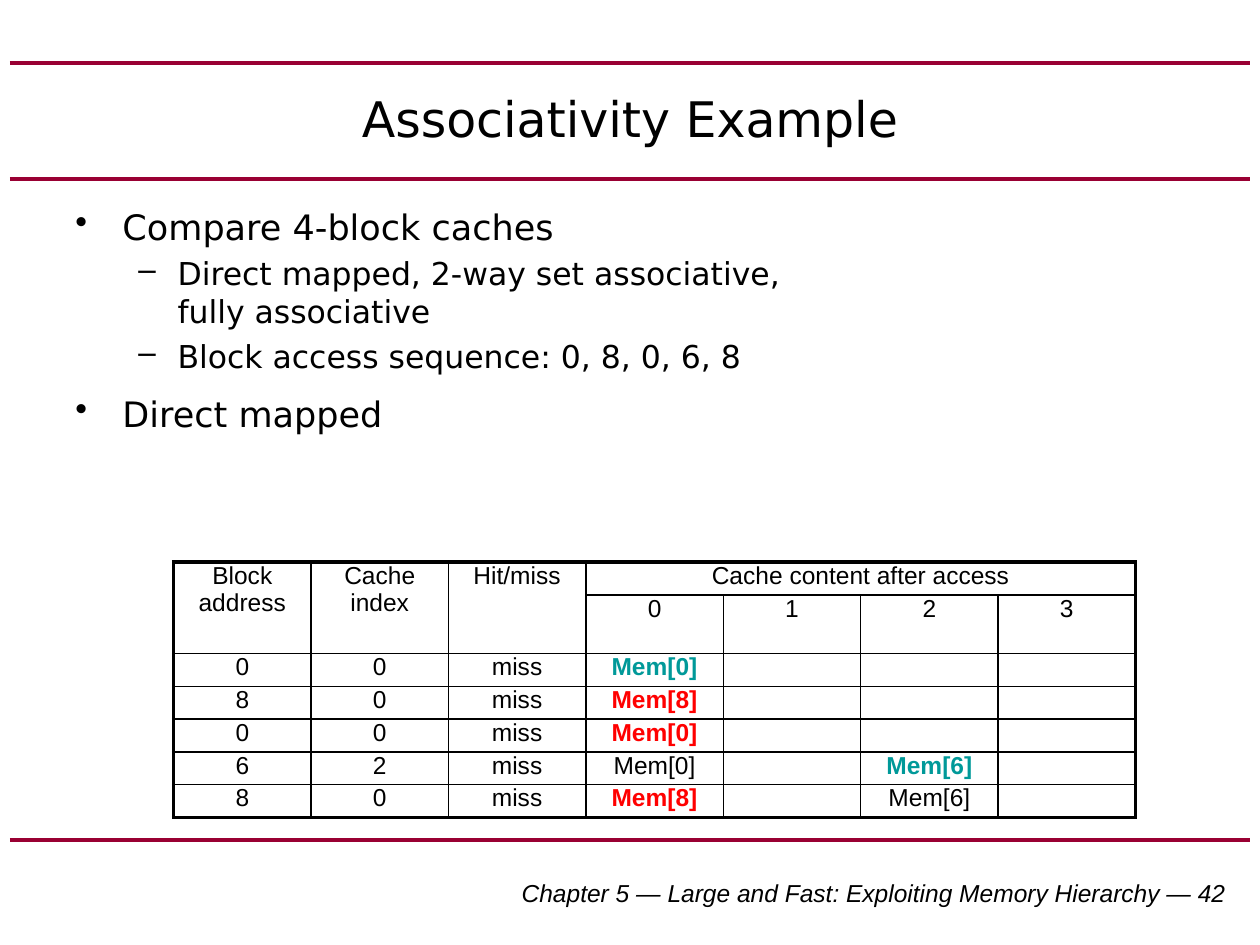
"""Build the slide comparing direct mapped cache accesses."""
from dataclasses import dataclass

from pptx import Presentation
from pptx.dml.color import RGBColor as Rgb
from pptx.enum.shapes import MSO_CONNECTOR as Conn
from pptx.enum.text import MSO_ANCHOR as Anchor, PP_ALIGN as Align
from pptx.oxml.ns import qn
from pptx.util import Cm, Pt
from lxml.etree import SubElement as Sub


@dataclass(frozen=True)
class Theme:
    ink: str = "000000"
    rule: str = "990033"
    new: str = "009999"
    swap: str = "FF0000"
    sans: str = "DejaVu Sans"
    plain: str = "Arial"
    title: int = 28
    body: int = 20
    sub: int = 18
    small: int = 14
    thin: float = 1
    thick: float = 2.25


look = Theme()

TITLE = "Associativity Example"
FOOTER = "Chapter 5 — Large and Fast: Exploiting Memory Hierarchy — 42"
POINTS = [
    (0, "Compare 4-block caches", 0),
    (1, "Direct mapped, 2-way set associative,\vfully associative", 4),
    (1, "Block access sequence: 0, 8, 0, 6, 8", 4),
    (0, "Direct mapped", 10),
]
LEVELS = [
    dict(bullet="•", left=0.95, hang=0.95, size=look.body),
    dict(bullet="–", left=2.06, hang=0.79, size=look.sub),
]
GRID = [
    ["Block address", "Cache index", "Hit/miss", "Cache content after access", "", "", ""],
    ["", "", "", "0", "1", "2", "3"],
    ["0", "0", "miss", "Mem[0]", "", "", ""],
    ["8", "0", "miss", "Mem[8]", "", "", ""],
    ["0", "0", "miss", "Mem[0]", "", "", ""],
    ["6", "2", "miss", "Mem[0]", "", "Mem[6]", ""],
    ["8", "0", "miss", "Mem[8]", "", "Mem[6]", ""],
]
MERGES = [((0, 0), (1, 0)), ((0, 1), (1, 1)), ((0, 2), (1, 2)), ((0, 3), (0, 6))]
MARKS = {(2, 3): look.new, (3, 3): look.swap, (4, 3): look.swap,
         (5, 5): look.new, (6, 3): look.swap}
RULES = [1.27, 3.61, 16.94]
ROWS = [0.66, 1.11] + [0.66] * 5
COL = 2.77


def write(para, text, size=look.small, font=look.plain, color=look.ink,
          bold=False, italic=False, align=Align.LEFT, before=0,
          bullet=None, left=0, hang=0):
    """Put text into a paragraph with its format."""
    para.text = text
    para.alignment = align
    if bullet:
        props = para._p.get_or_add_pPr()
        props.set("marL", str(Cm(left)))
        props.set("indent", str(-Cm(hang)))
        Sub(props, qn("a:buChar"), char=bullet)
    para.space_before = Pt(before)
    for run in para.runs:
        face = run.font
        face.name, face.size = font, Pt(size)
        face.bold, face.italic = bold, italic
        face.color.rgb = Rgb.from_string(color)
    if not text:
        Sub(para._p, qn("a:endParaRPr"), sz=str(size * 100))


def add_box(slide, *area):
    """Add a wrapping text box and return its frame."""
    frame = slide.shapes.add_textbox(*map(Cm, area)).text_frame
    frame.word_wrap = True
    return frame


def add_rule(slide, top):
    """Draw one line across the slide."""
    rule = slide.shapes.add_connector(Conn.STRAIGHT, Cm(0.2), Cm(top), Cm(25.2), Cm(top))
    rule.line.color.rgb = Rgb.from_string(look.rule)
    rule.line.width = Pt(look.thick)
    Sub(rule._element.spPr, qn("a:effectLst"))


def edge(cell, row, col):
    """Give a cell thick outer and thin inner borders."""
    outer = {
        "L": col == 0,
        "R": col + cell.span_width == len(GRID[0]),
        "T": row == 0,
        "B": row + cell.span_height == len(GRID),
    }
    props = cell._tc.get_or_add_tcPr()
    for side, out in outer.items():
        width = Pt(look.thick if out else look.thin)
        line = Sub(props, qn(f"a:ln{side}"), w=str(width))
        Sub(Sub(line, qn("a:solidFill")), qn("a:srgbClr"), val=look.ink)


def add_grid(slide):
    """Add the table of cache accesses."""
    wide = len(GRID[0])
    table = slide.shapes.add_table(len(GRID), wide, Cm(3.5), Cm(11.33),
                                   Cm(COL * wide), Cm(sum(ROWS))).table
    table.first_row = table.horz_banding = False
    for col in table.columns:
        col.width = Cm(COL)
    for row, high in zip(table.rows, ROWS):
        row.height = Cm(high)
    for start, end in MERGES:
        table.cell(*start).merge(table.cell(*end))
    for r, row in enumerate(GRID):
        for c, text in enumerate(row):
            cell = table.cell(r, c)
            cell.margin_left = cell.margin_right = Cm(0.25)
            cell.margin_top = cell.margin_bottom = 0
            mark = MARKS.get((r, c))
            write(cell.text_frame.paragraphs[0], text, align=Align.CENTER,
                  color=mark or look.ink, bold=bool(mark))
            if not cell.is_spanned:
                edge(cell, r, c)
            cell.fill.background()


def main():
    """Build and save the slide."""
    deck = Presentation()
    deck.slide_width, deck.slide_height = Cm(25.4), Cm(19.05)
    slide = deck.slides.add_slide(deck.slide_layouts[5])
    for top in RULES:
        add_rule(slide, top)

    title = slide.shapes.title
    title.left, title.top, title.width, title.height = map(Cm, (1.27, 1.27, 22.86, 2.21))
    title.text_frame.vertical_anchor = Anchor.MIDDLE
    write(title.text_frame.paragraphs[0], TITLE, size=look.title,
          font=look.sans, align=Align.CENTER)

    body = add_box(slide, 1.27, 4.01, 22.99, 5.33)
    for i, (level, text, gap) in enumerate(POINTS):
        para = body.add_paragraph() if i else body.paragraphs[0]
        para.level = level
        write(para, text, font=look.sans, before=gap, **LEVELS[level])

    add_grid(slide)
    foot = add_box(slide, 9.53, 17.58, 15.44, 0.84)
    write(foot.paragraphs[0], FOOTER, italic=True, align=Align.RIGHT)
    deck.save("out.pptx")


if __name__ == "__main__":
    main()
